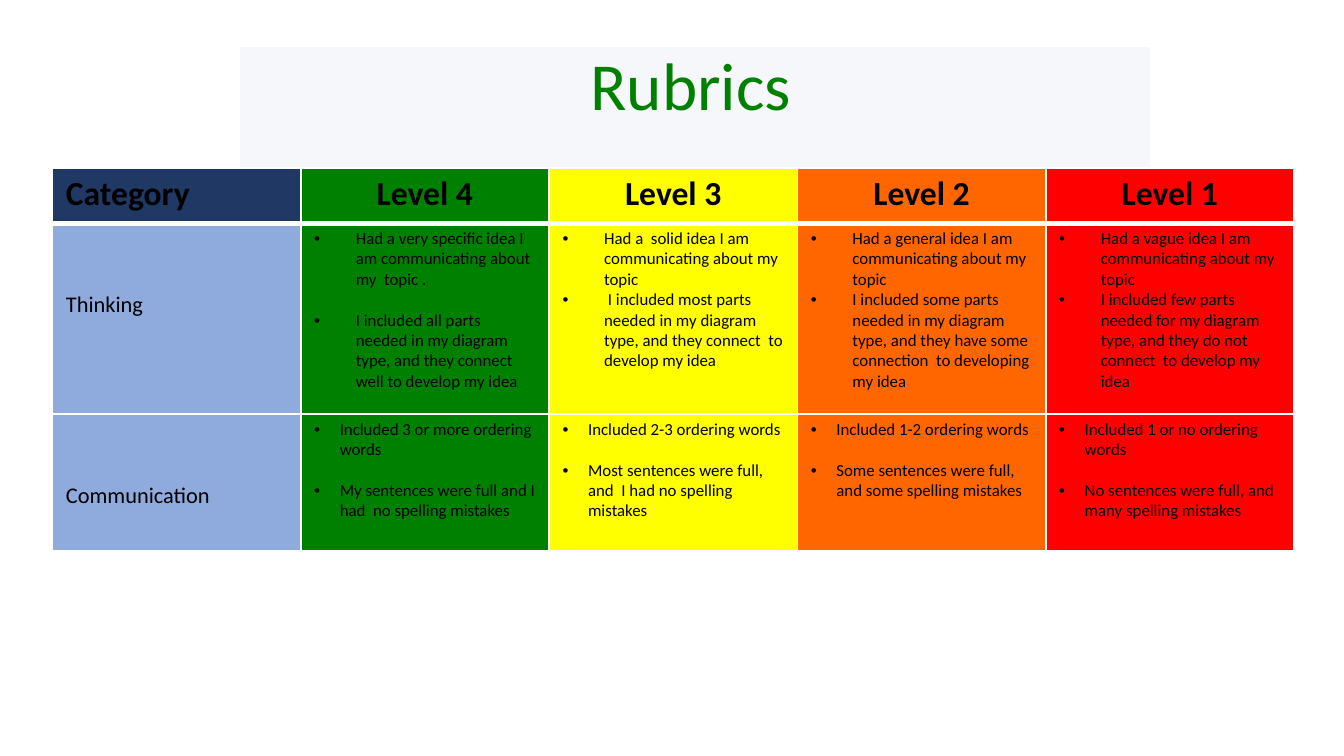
"""Build the Rubrics slide: a title over a four-level scoring table."""
from lxml.etree import SubElement
from pptx import Presentation
from pptx.dml.color import RGBColor
from pptx.enum.shapes import MSO_SHAPE
from pptx.enum.text import MSO_ANCHOR, MSO_AUTO_SIZE, PP_ALIGN
from pptx.oxml.ns import qn
from pptx.util import Inches, Pt

COLORS = {
    "band": "F5F7FB", "title": "008000", "text": "000000", "border": "FFFFFF",
    "header": "203864", "category": "8FAADC",
}
FONT = "Calibri"
LEVELS = [("Level 4", "008000"), ("Level 3", "FFFF00"), ("Level 2", "FF6600"), ("Level 1", "FF0000")]
CRITERIA = [
    {"category": "Thinking", "height": 1.42, "indent": 0.31, "gaps": [11, 0, 0, 0], "levels": [
        ("Had a very specific idea I am communicating about my  topic .",
         "I included all parts needed in my diagram type, and they connect well to develop my idea"),
        ("Had a  solid idea I am communicating about my  topic",
         " I included most parts needed in my diagram type, and they connect  to develop my idea"),
        ("Had a general idea I am communicating about my  topic",
         "I included some parts needed in my diagram type, and they have some connection  to developing my idea"),
        ("Had a vague idea I am communicating about my  topic",
         "I included few parts needed for my diagram type, and they do not connect  to develop my idea"),
    ]},
    {"category": "Communication", "height": 1.02, "indent": 0.19, "gaps": [11, 11, 11, 11], "levels": [
        ("Included 3 or more ordering words", "My sentences were full and I had  no spelling mistakes"),
        ("Included 2-3 ordering words", "Most sentences were full, and  I had no spelling mistakes"),
        ("Included 1-2 ordering words", "Some sentences were full, and some spelling mistakes"),
        ("Included 1 or no ordering words", "No sentences were full, and many spelling mistakes"),
    ]},
]
SLIDE_WIDTH = 10
SLIDE_HEIGHT = SLIDE_WIDTH * 9 / 16
HEADER_HEIGHT = 0.41
TABLE_LEFT, TABLE_TOP, TABLE_WIDTH = 0.39, 1.25, 9.24


def rgb(name):
    return RGBColor.from_string(COLORS.get(name, name))


def style_font(paragraph, size, color="text", bold=False):
    font = paragraph.font
    font.name, font.size, font.bold = FONT, Pt(size), bold
    font.color.rgb = rgb(color)


def style_cell(cell, fill, top=1, bottom=1, margin_top=0.04):
    cell.margin_left = cell.margin_right = Inches(0.1)
    cell.margin_top, cell.margin_bottom = Inches(margin_top), Inches(0.04)
    properties = cell._tc.get_or_add_tcPr()
    for side, width in (("L", 1), ("R", 1), ("T", top), ("B", bottom)):
        border = SubElement(properties, qn(f"a:ln{side}"), w=str(Pt(width)))
        border_fill = SubElement(border, qn("a:solidFill"))
        SubElement(border_fill, qn("a:srgbClr"), val=COLORS["border"])
    cell.fill.solid()
    cell.fill.fore_color.rgb = rgb(fill)


def write_label(cell, label, size, bold=False, align=PP_ALIGN.LEFT):
    cell.text = label
    paragraph = cell.text_frame.paragraphs[0]
    paragraph.alignment = align
    style_font(paragraph, size, bold=bold)


def write_bullets(cell, bullets, indent, gap):
    cell.text = "\n".join(bullets)
    for index, paragraph in enumerate(cell.text_frame.paragraphs):
        properties = paragraph._p.get_or_add_pPr()
        properties.set("marL", str(Inches(indent)))
        properties.set("indent", str(-Inches(indent)))
        SubElement(properties, qn("a:buFont"), typeface="Arial")
        SubElement(properties, qn("a:buChar"), char="•")
        if index and gap:
            paragraph.space_before = Pt(gap)
        style_font(paragraph, 9)


def add_title(slide):
    title = slide.shapes.title
    title.left, title.top, title.width, title.height = map(Inches, (0.87, 0.27, 8.54, 0.71))
    title.text = "Rubrics"
    frame = title.text_frame
    frame.auto_size, frame.vertical_anchor = MSO_AUTO_SIZE.NONE, MSO_ANCHOR.TOP
    frame.paragraphs[0].alignment = PP_ALIGN.CENTER
    style_font(frame.paragraphs[0], 36, "title")

    band = slide.shapes.add_shape(MSO_SHAPE.RECTANGLE, *map(Inches, (1.79, 0.35, 6.76, 0.99)))
    band.shadow.inherit = False
    band.fill.solid()
    band.fill.fore_color.rgb = band.line.color.rgb = rgb("band")
    band.line.width = Pt(0.5)
    title._element.addprevious(band._element)


def add_rubric(slide):
    heights = [HEADER_HEIGHT] + [criterion["height"] for criterion in CRITERIA]
    columns = len(LEVELS) + 1
    rubric = slide.shapes.add_table(
        len(heights), columns, Inches(TABLE_LEFT), Inches(TABLE_TOP),
        Inches(TABLE_WIDTH), Inches(sum(heights))).table
    rubric.horz_banding = False
    for row, height in zip(rubric.rows, heights):
        row.height = Inches(height)

    headings = [("Category", "header")] + LEVELS
    for column, (heading, fill) in enumerate(headings):
        cell = rubric.cell(0, column)
        style_cell(cell, fill, bottom=3)
        write_label(cell, heading, 18, True, PP_ALIGN.CENTER if column else PP_ALIGN.LEFT)

    for row, criterion in enumerate(CRITERIA, 1):
        top = 3 if row == 1 else 1
        category = rubric.cell(row, 0)
        style_cell(category, "category", top, margin_top=0.51)
        write_label(category, criterion["category"], 12)
        entries = zip(LEVELS, criterion["levels"], criterion["gaps"])
        for column, ((_, fill), bullets, gap) in enumerate(entries, 1):
            cell = rubric.cell(row, column)
            style_cell(cell, fill, top)
            write_bullets(cell, bullets, criterion["indent"], gap)


def main():
    presentation = Presentation()
    presentation.slide_width = Inches(SLIDE_WIDTH)
    presentation.slide_height = Inches(SLIDE_HEIGHT)
    slide = presentation.slides.add_slide(presentation.slide_layouts[5])
    add_title(slide)
    add_rubric(slide)
    presentation.save("out.pptx")


if __name__ == "__main__":
    main()
